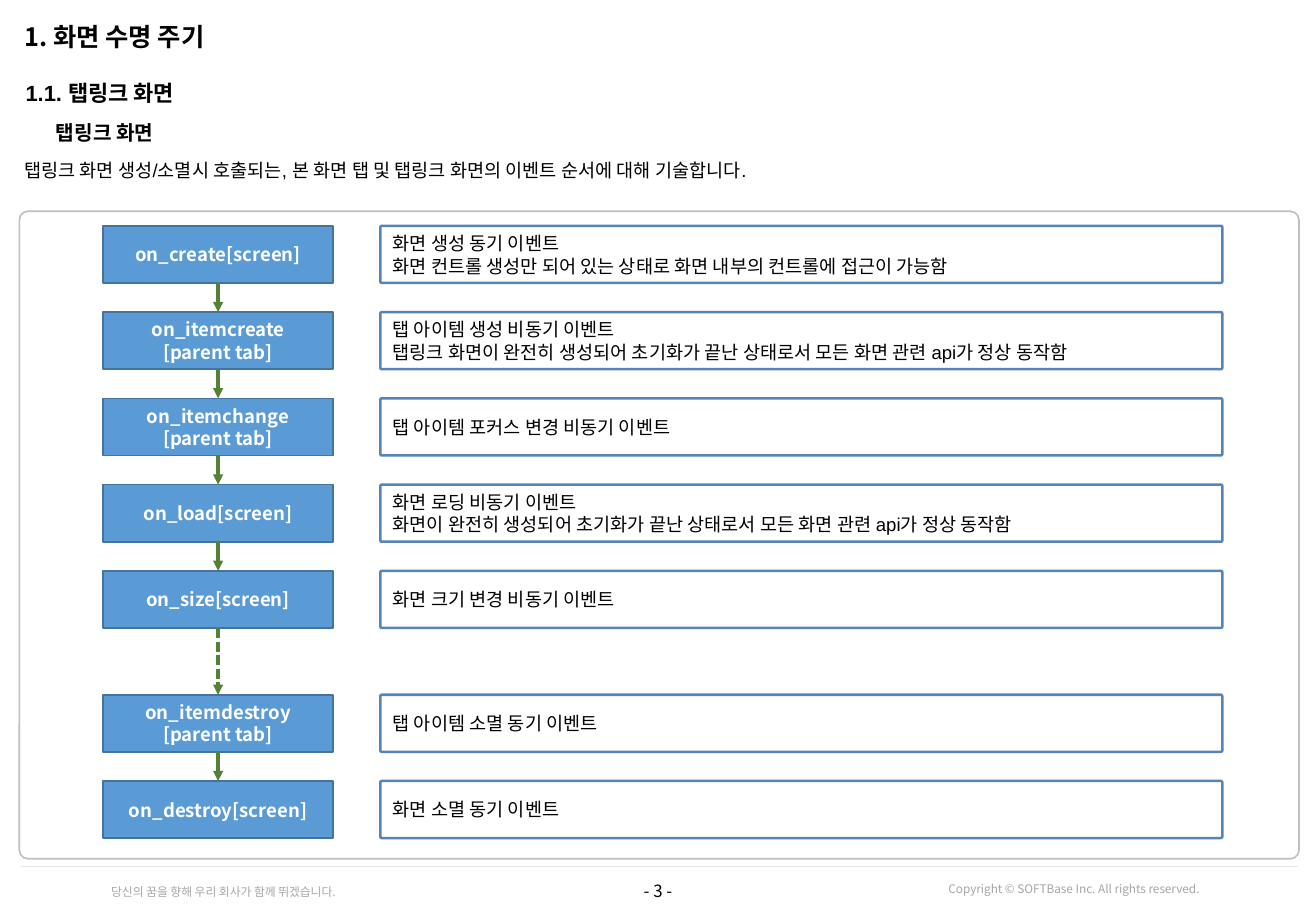
from lxml.etree import SubElement
from pptx import Presentation
from pptx.dml.color import RGBColor
from pptx.enum.dml import MSO_LINE
from pptx.enum.shapes import MSO_CONNECTOR, MSO_SHAPE
from pptx.enum.text import MSO_ANCHOR, MSO_AUTO_SIZE, PP_ALIGN
from pptx.oxml.ns import qn
from pptx.util import Inches, Pt

# Content
NOTO, ARIAL = "Noto Sans CJK KR", "Arial"
COLORS = {"text": "000000", "white": "FFFFFF", "footer": "A6A6A6", "rule": "E7E6E6",
          "panel": "BFBFBF", "event": "5B9BD5", "event_line": "43739E",
          "note_line": "5683BA", "arrow": "548235"}

# placeholder index, text, (left, top, width, height), font format
HEADINGS = [
    (0, "1. 화면 수명 주기", (0.16, 0.13, 10.55, 0.34),
     {"name": NOTO, "size": 15, "bold": True}),
    (1, "1.1. 탭링크 화면", (0.17, 0.61, 10.54, 0.28),
     {"name": ARIAL, "size": 13, "bold": True}),
    (3, "탭링크 화면", (0.42, 0.95, 10.29, 0.28),
     {"name": NOTO, "size": 12, "bold": True}),
    (2, "탭링크 화면 생성/소멸시 호출되는, 본 화면 탭 및 탭링크 화면의 이벤트 순서에 대해 기술합니다.",
     (0.16, 1.27, 10.55, 0.36), {"name": ARIAL, "size": 11, "bold": False}),
]

# event lines, description lines
STEPS = [
    (["on_create[screen]"],
     ["화면 생성 동기 이벤트",
      "화면 컨트롤 생성만 되어 있는 상태로 화면 내부의 컨트롤에 접근이 가능함"]),
    (["on_itemcreate", "[parent tab]"],
     ["탭 아이템 생성 비동기 이벤트",
      "탭링크 화면이 완전히 생성되어 초기화가 끝난 상태로서 모든 화면 관련 api가 정상 동작함"]),
    (["on_itemchange", "[parent tab]"], ["탭 아이템 포커스 변경 비동기 이벤트"]),
    (["on_load[screen]"],
     ["화면 로딩 비동기 이벤트",
      "화면이 완전히 생성되어 초기화가 끝난 상태로서 모든 화면 관련 api가 정상 동작함"]),
    (["on_size[screen]"], ["화면 크기 변경 비동기 이벤트"]),
    (["on_itemdestroy", "[parent tab]"], ["탭 아이템 소멸 동기 이벤트"]),
    (["on_destroy[screen]"], ["화면 소멸 동기 이벤트"]),
]

FOOTERS = [
    ("- 3 -", (0, 7.18, 10.83, 0.31), PP_ALIGN.CENTER, 10, "text"),
    ("Copyright © SOFTBase Inc. All rights reserved.", (7.7, 7.21, 2.27, 0.22),
     PP_ALIGN.RIGHT, 7, "footer"),
    ("당신의 꿈을 향해 우리 회사가 함께 뛰겠습니다.", (0.58, 7.23, 2.28, 0.22),
     PP_ALIGN.RIGHT, 7, "footer"),
]

# Layout of the flow
FIRST_TOP, PITCH, STEP_H = 1.86, 0.71, 0.47
EVENT_X, EVENT_W = 0.85, 1.89
NOTE_X, NOTE_W = 3.13, 6.93
PAUSE_AFTER, PAUSE_GAP = 4, 0.31
LINE_RATIO = 1.21


def rgb(key):
    return RGBColor.from_string(COLORS[key])


def box_of(values):
    return [Inches(v) for v in values]


def write(sp, lines, font, color="text", align=PP_ALIGN.LEFT, anchor=MSO_ANCHOR.MIDDLE):
    tf = sp.text_frame
    tf.auto_size = MSO_AUTO_SIZE.NONE
    tf.word_wrap = True
    tf.vertical_anchor = anchor
    for i, line in enumerate(lines):
        p = tf.paragraphs[0] if i == 0 else tf.add_paragraph()
        p.alignment = align
        p.space_before = Pt(0)
        p.line_spacing = Pt(round(font["size"] * LINE_RATIO, 1))
        r = p.add_run()
        r.text = line
        r.font.color.rgb = rgb(color)
        for attr, value in font.items():
            setattr(r.font, attr, Pt(value) if attr == "size" else value)
        SubElement(r.font._element, qn("a:ea")).set("typeface", NOTO)


def add_box(s, kind, box, line, width, fill=None, radius=None):
    sp = s.shapes.add_shape(kind, *box_of(box))
    sp.shadow.inherit = False
    if fill:
        sp.fill.solid()
        sp.fill.fore_color.rgb = rgb(fill)
    else:
        sp.fill.background()
    sp.line.color.rgb = rgb(line)
    sp.line.width = Pt(width)
    if radius is not None:
        sp.adjustments[0] = radius
    return sp


def add_line(s, start, end, color, width):
    line = s.shapes.add_connector(MSO_CONNECTOR.STRAIGHT, *box_of(start + end))
    line.line.color.rgb = rgb(color)
    line.line.width = Pt(width)
    SubElement(line._element.spPr, qn("a:effectLst"))
    return line


def step_top(i):
    return FIRST_TOP + i * PITCH + (PAUSE_GAP if i > PAUSE_AFTER else 0)


prs = Presentation()
prs.slide_width, prs.slide_height = Inches(10.83), Inches(7.5)
s = prs.slides.add_slide(prs.slide_layouts.get_by_name("Comparison"))

# Frame and footer
for text, box, align, size, color in FOOTERS:
    sp = s.shapes.add_textbox(*box_of(box))
    write(sp, [text], {"name": NOTO, "size": size}, color, align)
add_line(s, (0.17, 7.13), (10.68, 7.13), "rule", 0.5)
add_box(s, MSO_SHAPE.ROUNDED_RECTANGLE, (0.16, 1.74, 10.53, 5.33), "panel", 1, radius=0.013)

# Headings
holders = {sp.placeholder_format.idx: sp for sp in s.placeholders}
for idx, text, box, font in HEADINGS:
    sp = holders.pop(idx)
    sp.left, sp.top, sp.width, sp.height = box_of(box)
    tf = sp.text_frame
    for side in ("left", "top", "right", "bottom"):
        setattr(tf, f"margin_{side}", Inches(0.04))
    pPr = tf.paragraphs[0]._p.get_or_add_pPr()
    pPr.set("marL", "0")
    pPr.set("indent", "0")
    SubElement(pPr, qn("a:buNone"))
    write(sp, [text], font, anchor=MSO_ANCHOR.TOP)
for sp in holders.values():
    sp._element.getparent().remove(sp._element)

# Event boxes with their descriptions
for i, (event, note) in enumerate(STEPS):
    top = step_top(i)
    sp = add_box(s, MSO_SHAPE.RECTANGLE, (EVENT_X, top, EVENT_W, STEP_H),
                 "event_line", 1, fill="event")
    write(sp, event, {"name": NOTO, "size": 11, "bold": True}, "white", PP_ALIGN.CENTER)
    sp = add_box(s, MSO_SHAPE.ROUNDED_RECTANGLE, (NOTE_X, top, NOTE_W, STEP_H),
                 "note_line", 1.5, fill="white", radius=0.028)
    write(sp, note, {"name": ARIAL, "size": 11})

# Arrows between events
center = EVENT_X + EVENT_W / 2
for i in range(len(STEPS) - 1):
    arrow = add_line(s, (center, step_top(i) + STEP_H), (center, step_top(i + 1)), "arrow", 2)
    if i == PAUSE_AFTER:
        arrow.line.dash_style = MSO_LINE.SQUARE_DOT
    SubElement(arrow.line._get_or_add_ln(), qn("a:tailEnd")).set("type", "triangle")

prs.save("out.pptx")
